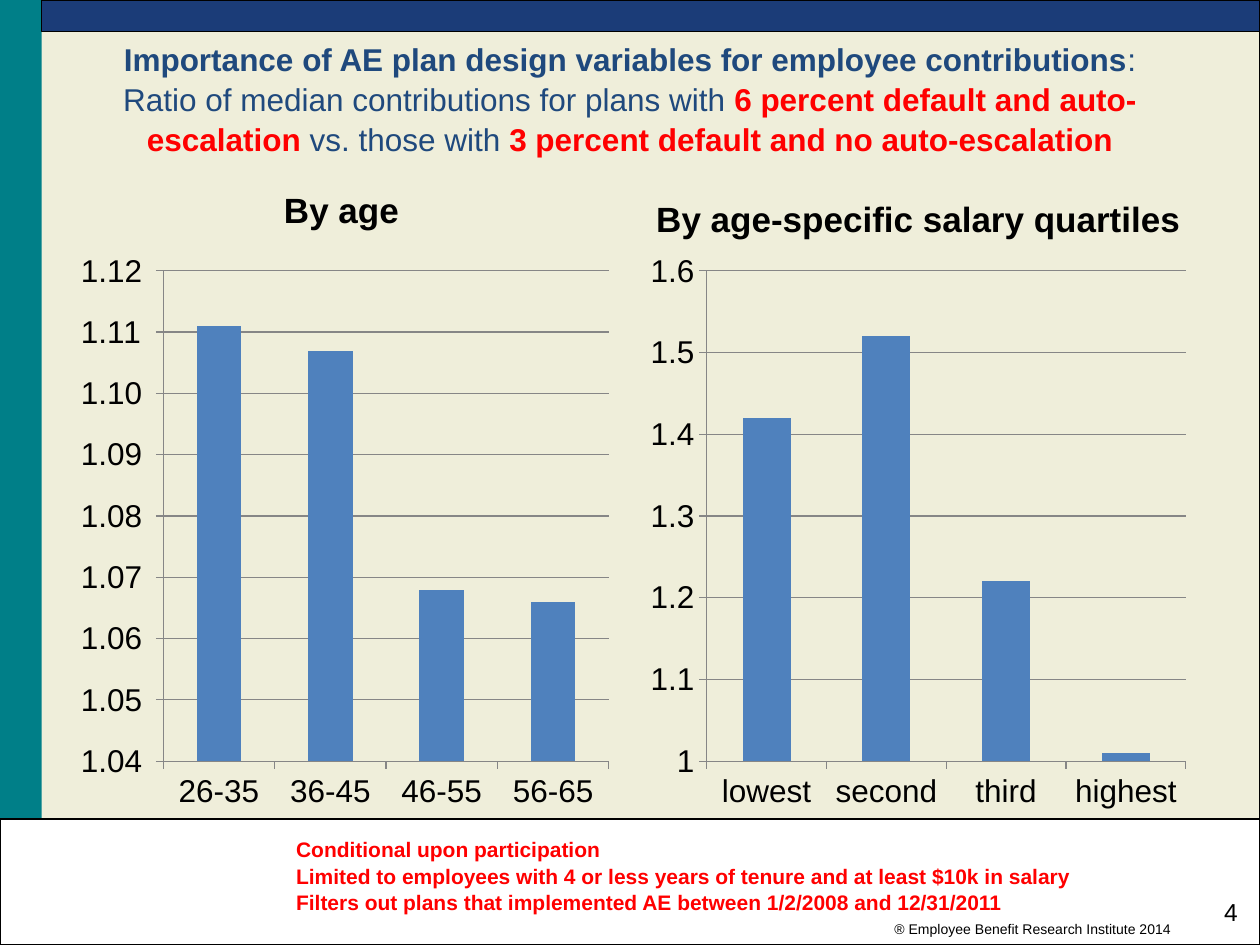
from pptx import Presentation
from pptx.chart.data import CategoryChartData
from pptx.dml.color import RGBColor
from pptx.enum.chart import XL_CHART_TYPE, XL_TICK_MARK
from pptx.enum.shapes import MSO_SHAPE
from pptx.enum.text import MSO_ANCHOR, PP_ALIGN
from pptx.oxml import parse_xml
from pptx.oxml.ns import nsdecls
from pptx.util import Cm, Pt

COLUMN = XL_CHART_TYPE.COLUMN_CLUSTERED
TICK_OUT, TICK_NONE = XL_TICK_MARK.OUTSIDE, XL_TICK_MARK.NONE
RECT = MSO_SHAPE.RECTANGLE
LEFT, CENTER, RIGHT = PP_ALIGN.LEFT, PP_ALIGN.CENTER, PP_ALIGN.RIGHT
TOP, MIDDLE, BOTTOM = MSO_ANCHOR.TOP, MSO_ANCHOR.MIDDLE, MSO_ANCHOR.BOTTOM

THEME = {
    "font": "Arial",
    "black": "000000", "white": "FFFFFF", "cream": "EFEEDA", "teal": "007F88",
    "navy": "1B3C78", "blue": "1F497D", "red": "FF0000", "bar": "4F81BD",
    "grid": "868686",
    "title": 18, "heading": 20, "chart": 18, "note": 12, "number": 14, "credit": 8,
}

# Content: runs are (text, colour, bold); "\v" is a line break
TITLE = [
    ("Importance of AE plan design variables for employee contributions", "blue", True),
    (":\v", "blue", False),
    ("Ratio of median contributions for plans with ", "blue", False),
    ("6 percent default and auto-escalation", "red", True),
    (" vs. those with ", "blue", False),
    ("3 percent default and no auto-escalation", "red", True),
]
NOTES = [
    "Conditional upon participation",
    "Limited to employees with 4 or less years of tenure and at least $10k in salary",
    "Filters out plans that implemented AE between 1/2/2008 and 12/31/2011",
]
CREDIT = "® Employee Benefit Research Institute 2014"
NUMBER = "4"
# plot is the inner plot area (x, y, w, h) as shares of the chart
CHARTS = [
    {"heading": "By age", "heading_h": 1.17,
     "cats": ["26-35", "36-45", "46-55", "56-65"],
     "vals": [1.111, 1.107, 1.068, 1.066],
     "scale": (1.04, 1.12, 0.01), "format": "0.00_)",
     "plot": (0.18, 0.05, 0.8, 0.85)},
    {"heading": "By age-specific salary quartiles", "heading_h": 1.35,
     "cats": ["lowest", "second", "third", "highest"],
     "vals": [1.42, 1.52, 1.22, 1.01],
     "scale": (1, 1.6, 0.1), "format": "General",
     "plot": (0.12, 0.05, 0.86, 0.85)},
]

# Layout in centimetres
SLIDE_W, SLIDE_H = 25.4, 19.05
SIDE_W, BAR_H, FOOT_Y = 0.84, 0.64, 16.51
MARGIN, CHART_W = 1.27, 11.23
HEADING_Y, CHART_Y = 3.61, 4.88
PANELS = [  # x, y, w, h, fill, outlined
    (0, 0, SLIDE_W, SLIDE_H, "cream", True),
    (0, 0, SIDE_W, SLIDE_H, "teal", False),
    (0, FOOT_Y, SLIDE_W, SLIDE_H - FOOT_Y, "white", True),
    (SIDE_W, 0, SLIDE_W - SIDE_W, BAR_H, "navy", True),
]


def rgb(name):
    return RGBColor.from_string(THEME[name])


def place(sp, x, y, w, h):
    sp.left, sp.top, sp.width, sp.height = Cm(x), Cm(y), Cm(w), Cm(h)


def write(tf, paragraphs, size, align=LEFT, anchor=TOP, spacing=1.0, wrap=True):
    tf.word_wrap = wrap
    tf.vertical_anchor = anchor
    for i, runs in enumerate(paragraphs):
        p = tf.paragraphs[0] if i == 0 else tf.add_paragraph()
        p.alignment = align
        p.line_spacing = spacing
        for text, color, bold in runs:
            r = p.add_run()
            r.text = text.rstrip("\v")
            r.font.name, r.font.size = THEME["font"], Pt(THEME[size])
            r.font.bold, r.font.color.rgb = bold, rgb(color)
            if text.endswith("\v"):
                p.add_line_break()


def add_text(s, box, paragraphs, size, **options):
    sp = s.shapes.add_textbox(*(Cm(v) for v in box))
    write(sp.text_frame, paragraphs, size, **options)


def add_panel(s, x, y, w, h, fill, outlined):
    sp = s.shapes.add_shape(RECT, Cm(x), Cm(y), Cm(w), Cm(h))
    sp.shadow.inherit = False
    sp.fill.solid()
    sp.fill.fore_color.rgb = rgb(fill)
    if outlined:
        sp.line.color.rgb = rgb("black")
        sp.line.width = Pt(0.75)
    else:
        sp.line.fill.background()


def set_plot_area(chart, plot):
    parts = "".join(f'<c:{k} val="{v}"/>' for k, v in zip("xywh", plot))
    layout = parse_xml(
        f'<c:layout {nsdecls("c")}><c:manualLayout><c:layoutTarget val="inner"/>'
        f'<c:xMode val="edge"/><c:yMode val="edge"/>{parts}</c:manualLayout></c:layout>')
    area = chart.element.chart.plotArea
    for old in area.findall(layout.tag):
        area.remove(old)
    area.insert(0, layout)


def add_bars(s, x, spec):
    data = CategoryChartData()
    data.categories = spec["cats"]
    data.add_series("Series 1", spec["vals"])
    chart = s.shapes.add_chart(COLUMN, Cm(x), Cm(CHART_Y), Cm(CHART_W),
                               Cm(FOOT_Y - CHART_Y), data).chart
    chart.has_legend = chart.has_title = False
    chart.font.name, chart.font.size = THEME["font"], Pt(THEME["chart"])
    chart.font.color.rgb = rgb("black")
    set_plot_area(chart, spec["plot"])

    plot = chart.plots[0]
    plot.gap_width, plot.vary_by_categories = 150, False
    fill = plot.series[0].format.fill
    fill.solid()
    fill.fore_color.rgb = rgb("bar")

    val = chart.value_axis
    val.minimum_scale, val.maximum_scale, val.major_unit = spec["scale"]
    val.has_major_gridlines = True
    val.tick_labels.number_format = spec["format"]
    val.tick_labels.number_format_is_linked = False
    for axis in (val, chart.category_axis):
        axis.major_tick_mark, axis.minor_tick_mark = TICK_OUT, TICK_NONE
    for part in (val, val.major_gridlines, chart.category_axis):
        part.format.line.color.rgb = rgb("grid")
        part.format.line.width = Pt(0.75)


prs = Presentation()
prs.slide_width, prs.slide_height = Cm(SLIDE_W), Cm(SLIDE_H)
s = prs.slides.add_slide(prs.slide_layouts[5])

# Coloured panels
for panel in PANELS:
    add_panel(s, *panel)

# Title, brought in front of the panels
title = s.shapes.title
s.shapes.element.append(title.element)
place(title, MARGIN, 0.76, SLIDE_W - 2 * MARGIN, 3.25)
title.text_frame.margin_bottom = Cm(0.95)
write(title.text_frame, [TITLE], "title", align=CENTER, anchor=MIDDLE, spacing=1.06)

# Two charts with headings, one against each margin
for spec, x in zip(CHARTS, (MARGIN, SLIDE_W - MARGIN - CHART_W)):
    add_text(s, (x, HEADING_Y, CHART_W, spec["heading_h"]),
             [[(spec["heading"], "black", True)]], "heading", align=CENTER, anchor=BOTTOM)
    add_bars(s, x, spec)

# Footer
add_text(s, (5.72, 16.71, 18.42, 1.8), [[(n, "red", True)] for n in NOTES], "note",
         spacing=1.06)
add_text(s, (17.78, 18.44, 6.17, 0.61), [[(CREDIT, "black", False)]], "credit", wrap=False)
add_text(s, (23.93, 17.96, 1.27, 1.07), [[(NUMBER, "black", False)]], "number", align=RIGHT)

prs.save("out.pptx")
